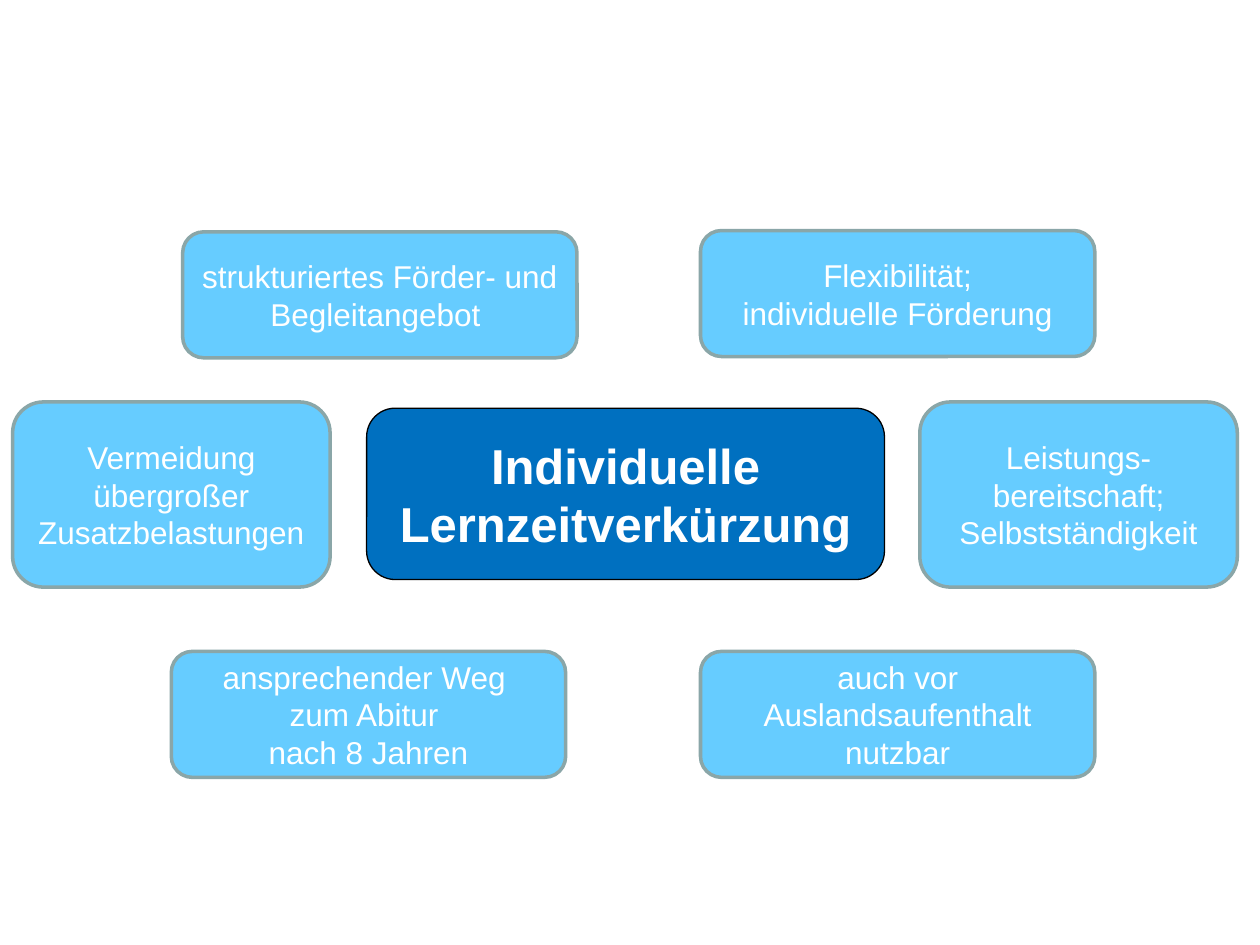
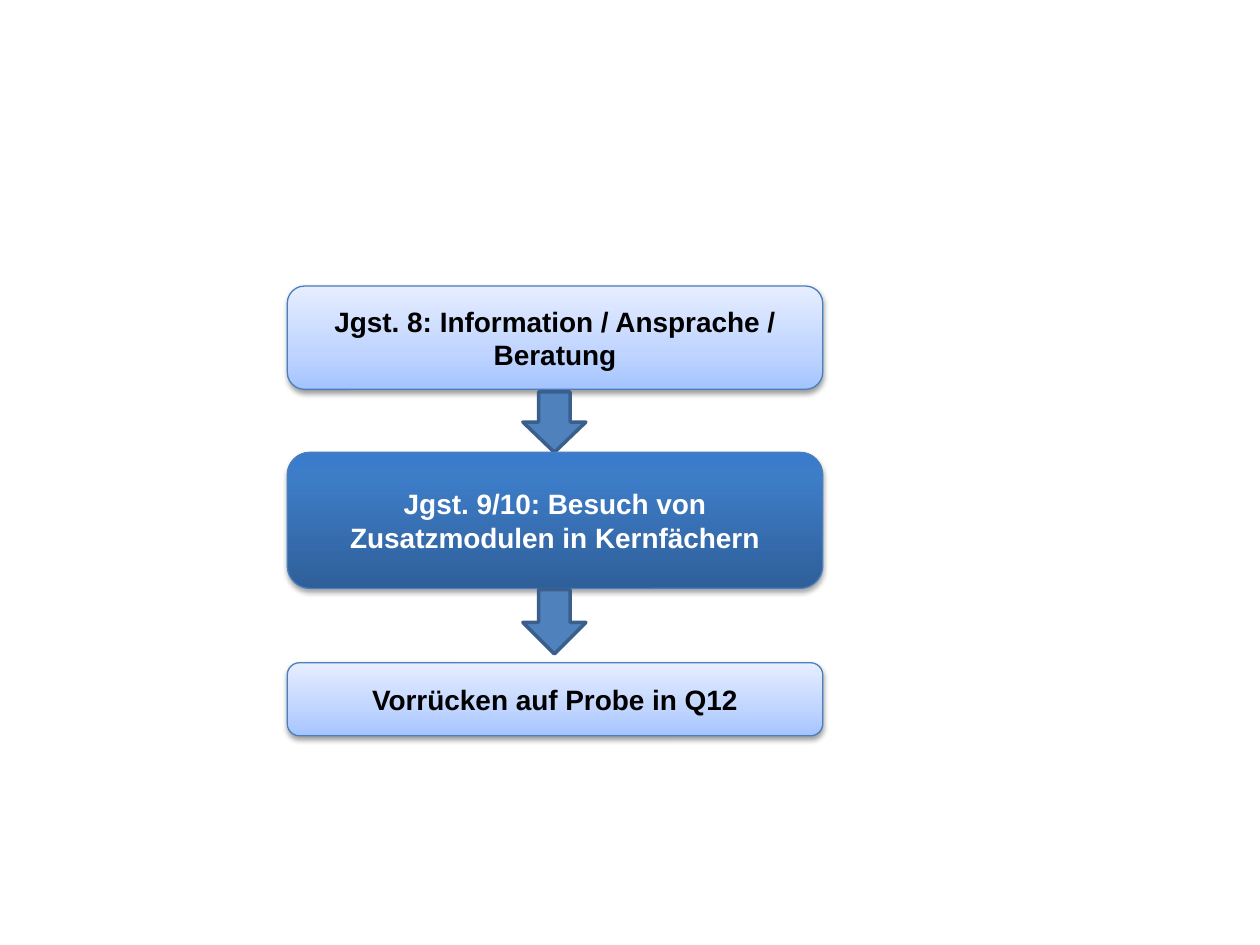
from lxml import etree
from pptx import Presentation
from pptx import util as u
from pptx.dml.color import RGBColor
from pptx.enum import shapes, text
from pptx.oxml.ns import qn

FONT = "Arial"
WHITE, BLACK = "FFFFFF", "000000"
CORE_BLUE, SKY, SKY_EDGE = "0070C0", "66CCFF", "8AA6A8"
STEP_EDGE, ARROW, ARROW_EDGE = "4B7EBC", "4F81BD", "3A5F8C"
PALE_STOPS = [(0, "A4C4FF"), (35, "BFD4FF"), (100, "E6EEFF")]
DEEP_STOPS = [(0, "2F5F99"), (80, "3D7CC7"), (100, "3A7CCB")]


def colour(value):
    return RGBColor.from_string(value)


def write(frame, content, size=18, fill=WHITE, bold=False):
    frame.word_wrap = True
    frame.vertical_anchor = text.MSO_ANCHOR.MIDDLE
    for index, line in enumerate(content.split("\n")):
        para = frame.add_paragraph() if index else frame.paragraphs[0]
        para.alignment = text.PP_ALIGN.CENTER
        span = para.add_run()
        span.text = line
        span.font.name = FONT
        span.font.size = u.Pt(size)
        span.font.bold = bold
        span.font.color.rgb = colour(fill)


def add_colour(parent, value):
    return etree.SubElement(parent, qn("a:srgbClr"), val=value)


class Builder:
    def __init__(self):
        self.deck = Presentation()
        self.deck.slide_width, self.deck.slide_height = u.Inches(10), u.Inches(7.5)
        self.page = None

    def new_page(self):
        self.page = self.deck.slides.add_slide(self.deck.slide_layouts[6])

    def shape(self, kind, place, fill, edge, weight):
        shape = self.page.shapes.add_shape(kind, *map(u.Inches, place))
        shape.shadow.inherit = False
        if isinstance(fill, str):
            shape.fill.solid()
            shape.fill.fore_color.rgb = colour(fill)
        else:
            self.gradient(shape, fill)
        shape.line.color.rgb = colour(edge)
        shape.line.width = u.Pt(weight)
        return shape

    def gradient(self, shape, stops):
        shape.fill.gradient()
        shape.fill.gradient_angle = 90
        stop_list = shape._element.spPr.find(".//" + qn("a:gsLst"))
        for stop in list(stop_list):
            stop_list.remove(stop)
        for position, value in stops:
            stop = etree.SubElement(stop_list, qn("a:gs"), pos=str(position * 1000))
            add_colour(stop, value)

    def shadow(self, shape, opacity, distance):
        effects = shape._element.spPr.find(qn("a:effectLst"))
        outer = etree.SubElement(
            effects, qn("a:outerShdw"), blurRad=str(u.Pt(3.1)),
            dist=str(u.Pt(distance)), dir="5400000", rotWithShape="0")
        etree.SubElement(add_colour(outer, BLACK), qn("a:alpha"), val=str(opacity * 1000))

    def box(self, place, content, fill=SKY, edge=SKY_EDGE, weight=2, **style):
        box = self.shape(shapes.MSO_SHAPE.ROUNDED_RECTANGLE, place, fill, edge, weight)
        write(box.text_frame, content, **style)
        return box

    def step(self, top, height, content, main=False):
        box = self.box((2.28, top, 4.25, height), content,
                       fill=DEEP_STOPS if main else PALE_STOPS, edge=STEP_EDGE,
                       weight=0.75, size=16, bold=True).text_frame
        for para in box.paragraphs:
            for span in para.runs:
                span.font.color.rgb = colour(WHITE if main else BLACK)
        self.shadow(box._parent, 35 if main else 38, 1.8 if main else 1.6)

    def arrow(self, top, height):
        self.shape(shapes.MSO_SHAPE.DOWN_ARROW, (4.15, top, 0.5, height),
                   ARROW, ARROW_EDGE, 2)


def build_aspects(builder):
    builder.new_page()
    builder.box((2.91, 3.24, 4.11, 1.36), "Individuelle Lernzeitverkürzung",
                fill=CORE_BLUE, edge=BLACK, weight=0.75, size=28, bold=True)
    wide, side = (3.13, 1), (2.52, 1.47)
    aspects = [
        (1.36, 5.17, wide, "ansprechender Weg \nzum Abitur \nnach 8 Jahren"),
        (1.45, 1.84, wide, "strukturiertes Förder- und Begleitangebot "),
        (5.56, 1.83, wide, "Flexibilität;\nindividuelle Förderung"),
        (0.1, 3.19, side, "Vermeidung übergroßer Zusatzbelastungen"),
        (7.3, 3.19, side, "Leistungs-bereitschaft;\nSelbstständigkeit"),
        (5.56, 5.17, wide, "auch vor Auslandsaufenthalt nutzbar"),
    ]
    for left, top, size, content in aspects:
        builder.box((left, top, *size), content)


def build_steps(builder):
    builder.new_page()
    builder.step(2.27, 0.82, "Jgst. 8: Information / Ansprache / Beratung")
    builder.arrow(3.11, 0.48)
    builder.step(3.59, 1.08, "Jgst. 9/10: Besuch von Zusatzmodulen in Kernfächern", main=True)
    builder.arrow(4.68, 0.51)
    builder.step(5.26, 0.58, "Vorrücken auf Probe in Q12")


def main():
    builder = Builder()
    build_aspects(builder)
    build_steps(builder)
    builder.deck.save("out.pptx")


if __name__ == "__main__":
    main()
